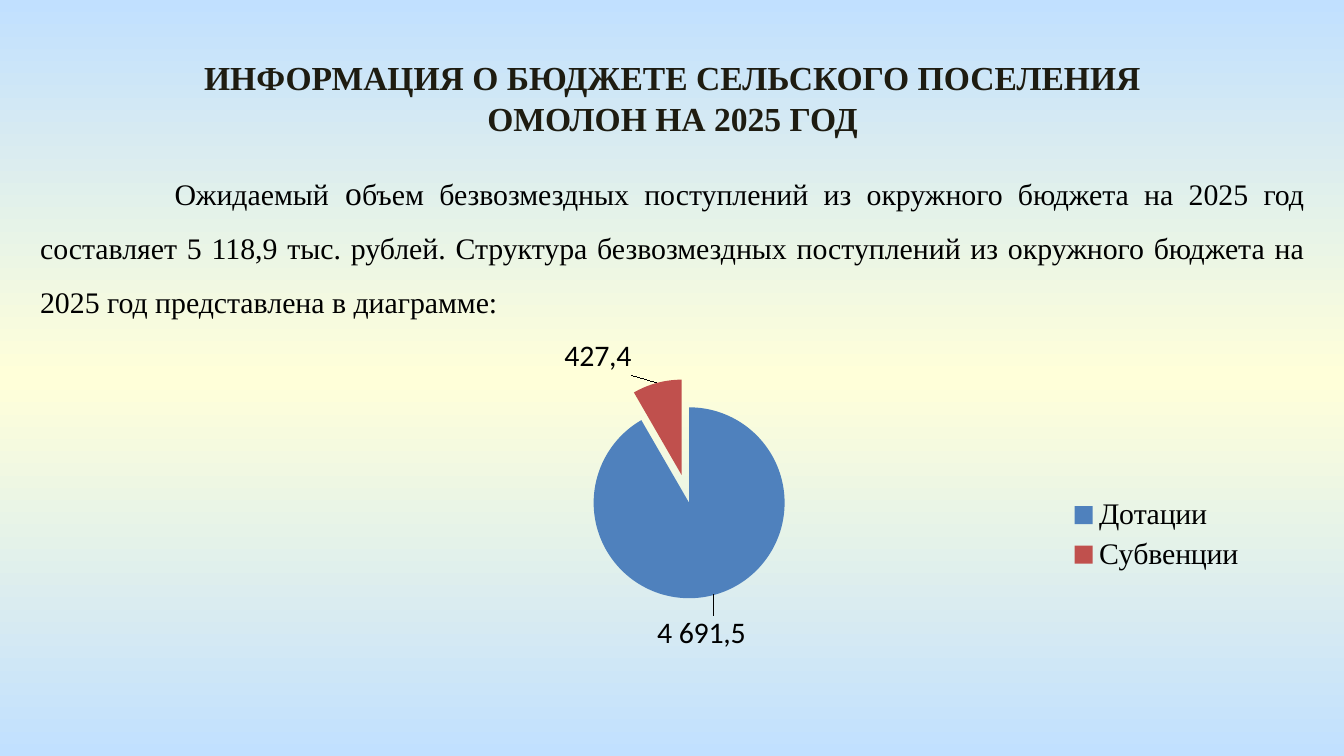
from copy import deepcopy

from pptx import Presentation
from pptx.chart.data import CategoryChartData
from pptx.dml.color import RGBColor
from pptx.enum.chart import XL_CHART_TYPE, XL_LABEL_POSITION, XL_LEGEND_POSITION
from pptx.enum.text import MSO_ANCHOR, PP_ALIGN
from pptx.oxml import parse_xml
from pptx.oxml.ns import nsdecls, qn
from pptx.util import Inches, Pt

SKY = RGBColor(0xC1, 0xE0, 0xFF)
CREAM = RGBColor(0xFF, 0xFF, 0xD9)
DARK = RGBColor(0x1E, 0x1C, 0x11)
BLACK = RGBColor(0, 0, 0)
BLUE = RGBColor(0x4F, 0x81, 0xBD)
RED = RGBColor(0xC0, 0x50, 0x4D)
SERIF, SANS = "Times New Roman", "Calibri"

BACKGROUND = [(0, SKY), (0.5, CREAM), (1, SKY)]
TITLE = ["ИНФОРМАЦИЯ О БЮДЖЕТЕ СЕЛЬСКОГО ПОСЕЛЕНИЯ", "ОМОЛОН НА 2025 ГОД"]
BODY = [
    ("Ожидаемый", 16),
    (" о", 18),
    ("бъем безвозмездных поступлений из окружного бюджета на 2025 год "
     "составляет 5 118,9 тыс. рублей. Структура безвозмездных поступлений "
     "из окружного бюджета на 2025 год представлена в диаграмме:", 16),
]
SLICES = [
    ("Дотации", 4691.5, "4 691,5", BLUE, (-0.05, 0.03)),
    ("Субвенции", 427.4, "427,4", RED, (-0.02, 0)),
]
PLOT = {"x": 0.418, "y": 0.126, "w": 0.187, "h": 0.528}
EXPLOSION = 15


def set_font(font, **values):
    color = values.pop("color", BLACK)
    for name, value in values.items():
        setattr(font, name, value)
    font.color.rgb = color


def manual_layout(values, inner=False):
    target = '<c:layoutTarget val="inner"/>' if inner else ""
    modes = '<c:xMode val="edge"/><c:yMode val="edge"/>' if inner else ""
    sizes = "".join(f'<c:{key} val="{value}"/>' for key, value in values.items())
    return parse_xml(f"<c:layout {nsdecls('c')}><c:manualLayout>"
                     f"{target}{modes}{sizes}</c:manualLayout></c:layout>")


def paint_background(slide):
    fill = slide.background.fill
    fill.gradient()
    fill.gradient_angle = 270
    stop_list = fill._fill._gradFill.find(qn("a:gsLst"))
    stop_list.insert(1, deepcopy(stop_list[0]))
    for stop, (position, color) in zip(fill.gradient_stops, BACKGROUND):
        stop.position = position
        stop.color.rgb = color


def add_title(slide):
    title = slide.shapes.title
    box = {"left": 0.63, "top": 0.37, "width": 8.75, "height": 0.71}
    for name, value in box.items():
        setattr(title, name, Inches(value))
    frame = title.text_frame
    frame.vertical_anchor = MSO_ANCHOR.MIDDLE
    frame.text = "\n".join(TITLE)
    for paragraph in frame.paragraphs:
        paragraph.alignment = PP_ALIGN.CENTER
        set_font(paragraph.runs[0].font, name=SERIF, size=Pt(18), bold=True, color=DARK)


def add_body(slide):
    box = slide.shapes.add_textbox(Inches(0.2), Inches(1.08), Inches(9.61), Inches(1.36))
    frame = box.text_frame
    frame.word_wrap = True
    paragraph = frame.paragraphs[0]
    paragraph.alignment = PP_ALIGN.JUSTIFY
    paragraph.line_spacing = 1.5
    paragraph._p.get_or_add_pPr().set("indent", str(Inches(1)))
    for text, size in BODY:
        run = paragraph.add_run()
        run.text = text
        set_font(run.font, name=SERIF, size=Pt(size))


def add_pie(slide):
    data = CategoryChartData(number_format="#,##0.0")
    data.categories = [name for name, *_ in SLICES]
    data.add_series("Series 1", [value for _, value, *_ in SLICES])
    chart = slide.shapes.add_chart(
        XL_CHART_TYPE.PIE, Inches(0.63), Inches(2.43), Inches(8.74), Inches(3.1), data
    ).chart
    chart.has_title = False
    set_font(chart.font, name=SANS, size=Pt(18))
    chart.has_legend = True
    chart.legend.position = XL_LEGEND_POSITION.RIGHT
    chart.legend.include_in_layout = False
    set_font(chart.legend.font, name=SERIF, size=Pt(16))

    plot_area = chart._chartSpace.chart.plotArea
    for layout in plot_area.findall(qn("c:layout")):
        plot_area.remove(layout)
    plot_area.insert(0, manual_layout(PLOT, inner=True))

    series = chart.plots[0].series[0]
    series._element.find(qn("c:tx")).addnext(
        parse_xml(f'<c:explosion {nsdecls("c")} val="{EXPLOSION}"/>'))
    labels = series.data_labels
    labels.show_value = True
    labels.number_format = "#,##0.0"
    labels.number_format_is_linked = False
    set_font(labels.font, name=SANS, size=Pt(16))

    for index, (_, _, text, color, (x, y)) in enumerate(SLICES):
        point = series.points[index]
        point.format.fill.solid()
        point.format.fill.fore_color.rgb = color
        label = point.data_label
        run = label.text_frame.paragraphs[0].add_run()
        run.text = text
        set_font(run.font, name=SANS, size=Pt(16))
        label.position = XL_LABEL_POSITION.OUTSIDE_END
        label_element = labels._element.findall(qn("c:dLbl"))[index]
        label_element.insert(1, manual_layout({"x": x, "y": y}))


def main():
    presentation = Presentation()
    presentation.slide_width = Inches(10)
    presentation.slide_height = presentation.slide_width * 9 // 16
    slide = presentation.slides.add_slide(presentation.slide_layouts[5])
    paint_background(slide)
    add_body(slide)
    add_pie(slide)
    add_title(slide)
    presentation.save("out.pptx")


if __name__ == "__main__":
    main()
